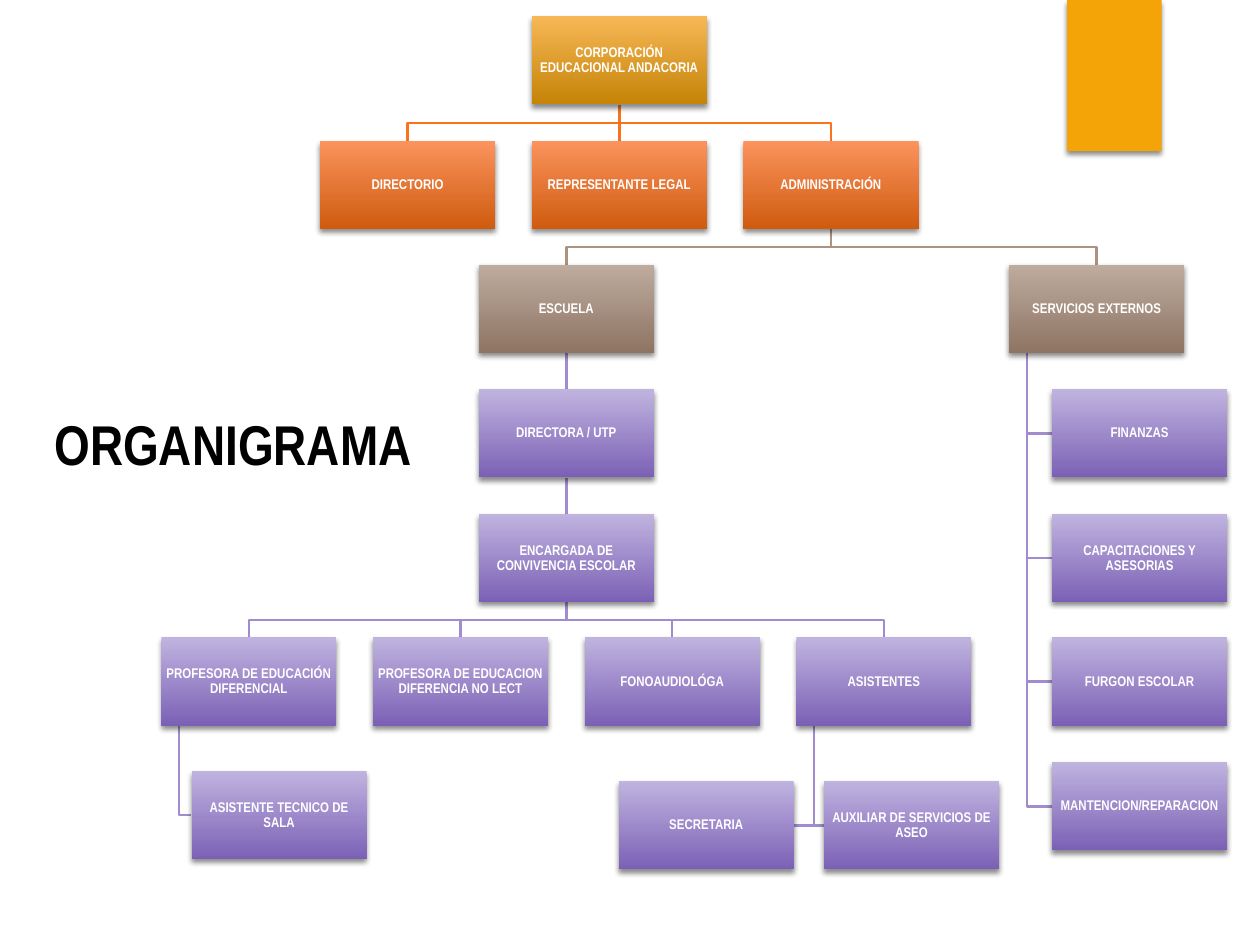
from lxml import etree
from pptx import Presentation
from pptx.dml.color import RGBColor
from pptx.enum.shapes import MSO_SHAPE
from pptx.enum.text import MSO_ANCHOR, PP_ALIGN
from pptx.oxml.ns import qn
from pptx.util import Inches, Pt

BOX_WIDTH, BOX_HEIGHT = 1.39, 0.7
SIDE_OFFSET = 0.14
ROWS = [0.13, 1.12, 2.10, 3.09, 4.08, 5.06, 6.05]

# Level: gradient top, gradient bottom, colour of the line from the parent
LEVELS = {
    "gold": ("F7B756", "C58406", None),
    "orange": ("FB935D", "CF5B0F", "FA731A"),
    "brown": ("BEAC9F", "8E7463", "AB9281"),
    "purple": ("C0B3DF", "7B61B6", "A18CD0"),
}

# Text, left, top, level, parent, side of the parent that the line leaves from
BOXES = [
    ("CORPORACIÓN EDUCACIONAL ANDACORIA", 4.22, ROWS[0], "gold", None, None),
    ("DIRECTORIO", 2.54, ROWS[1], "orange", "CORPORACIÓN EDUCACIONAL ANDACORIA", "centre"),
    ("REPRESENTANTE LEGAL", 4.22, ROWS[1], "orange", "CORPORACIÓN EDUCACIONAL ANDACORIA", "centre"),
    ("ADMINISTRACIÓN", 5.9, ROWS[1], "orange", "CORPORACIÓN EDUCACIONAL ANDACORIA", "centre"),
    ("ESCUELA", 3.8, ROWS[2], "brown", "ADMINISTRACIÓN", "centre"),
    ("DIRECTORA / UTP", 3.8, ROWS[3], "purple", "ESCUELA", "centre"),
    ("ENCARGADA DE CONVIVENCIA ESCOLAR", 3.8, ROWS[4], "purple", "DIRECTORA / UTP", "centre"),
    ("PROFESORA DE EDUCACIÓN DIFERENCIAL", 1.28, ROWS[5], "purple",
     "ENCARGADA DE CONVIVENCIA ESCOLAR", "centre"),
    ("ASISTENTE TECNICO DE SALA", 1.52, 6.12, "purple", "PROFESORA DE EDUCACIÓN DIFERENCIAL", "left"),
    ("PROFESORA DE EDUCACION DIFERENCIA NO LECT", 2.96, ROWS[5], "purple",
     "ENCARGADA DE CONVIVENCIA ESCOLAR", "centre"),
    ("FONOAUDIOLÓGA", 4.64, ROWS[5], "purple", "ENCARGADA DE CONVIVENCIA ESCOLAR", "centre"),
    ("ASISTENTES", 6.32, ROWS[5], "purple", "ENCARGADA DE CONVIVENCIA ESCOLAR", "centre"),
    ("SECRETARIA", 4.91, 6.2, "purple", "ASISTENTES", "left"),
    ("AUXILIAR DE SERVICIOS DE ASEO", 6.54, 6.2, "purple", "ASISTENTES", "left"),
    ("SERVICIOS EXTERNOS", 8.01, ROWS[2], "brown", "ADMINISTRACIÓN", "centre"),
    ("FINANZAS", 8.35, ROWS[3], "purple", "SERVICIOS EXTERNOS", "left"),
    ("CAPACITACIONES Y ASESORIAS", 8.35, ROWS[4], "purple", "SERVICIOS EXTERNOS", "left"),
    ("FURGON ESCOLAR", 8.35, ROWS[5], "purple", "SERVICIOS EXTERNOS", "left"),
    ("MANTENCION/REPARACION", 8.35, ROWS[6], "purple", "SERVICIOS EXTERNOS", "left"),
]


def color(value):
    return RGBColor.from_string(value)


def add_shadowed_rectangle(slide, left, top, width, height):
    shape = slide.shapes.add_shape(
        MSO_SHAPE.RECTANGLE, Inches(left), Inches(top), Inches(width), Inches(height))
    shape.line.fill.background()
    shape.shadow.inherit = False
    effects = shape._element.spPr.find(qn("a:effectLst"))
    shadow = etree.SubElement(effects, qn("a:outerShdw"), blurRad=str(Pt(3)),
                              dist=str(Pt(2)), dir="5400000", rotWithShape="0")
    black = etree.SubElement(shadow, qn("a:srgbClr"), val="000000")
    etree.SubElement(black, qn("a:alpha"), val="45000")
    return shape


presentation = Presentation()
presentation.slide_width, presentation.slide_height = Inches(10), Inches(7.5)
slide = presentation.slides.add_slide(presentation.slide_layouts[5])

# Corner block and title
corner = add_shadowed_rectangle(slide, 8.47, 0, 0.75, 1.2)
corner.fill.solid()
corner.fill.fore_color.rgb = color("F5A408")

title = slide.shapes.title
title.left, title.top = Inches(0.12), Inches(3.2)
title.width, title.height = Inches(3.46), Inches(1.18)
title.text_frame.text = "ORGANIGRAMA"
title.text_frame.vertical_anchor = MSO_ANCHOR.TOP
paragraph = title.text_frame.paragraphs[0]
paragraph.alignment = PP_ALIGN.CENTER
for name, value in {"name": "Arial Narrow", "size": Pt(32), "bold": True}.items():
    setattr(paragraph.font, name, value)
paragraph.font.color.rgb = color("000000")

# Lines from each parent to its children
positions = {text: (left, top) for text, left, top, *rest in BOXES}
for text, left, top, level, parent, side in BOXES:
    if parent is None:
        continue
    parent_left, parent_top = positions[parent]
    start_y = parent_top + BOX_HEIGHT
    if side == "centre":
        start_x = parent_left + BOX_WIDTH / 2
        end_x = left + BOX_WIDTH / 2
        middle_y = (start_y + top) / 2
        points = [(start_x, middle_y), (end_x, middle_y), (end_x, top)]
        if start_x == end_x:
            points = points[-1:]
    else:
        start_x = parent_left + SIDE_OFFSET
        end_x = left if left > start_x else left + BOX_WIDTH
        middle_y = top + BOX_HEIGHT / 2
        points = [(start_x, middle_y), (end_x, middle_y)]
    builder = slide.shapes.build_freeform(Inches(start_x), Inches(start_y))
    builder.add_line_segments([(Inches(x), Inches(y)) for x, y in points], close=False)
    link = builder.convert_to_shape()
    link.fill.background()
    link.line.color.rgb = color(LEVELS[level][2])
    link.line.width = Pt(1.5)
    link.shadow.inherit = False

# Boxes
for text, left, top, level, parent, side in BOXES:
    box = add_shadowed_rectangle(slide, left, top, BOX_WIDTH, BOX_HEIGHT)
    box.fill.gradient()
    box.fill.gradient_angle = 270
    for stop, value in zip(box.fill.gradient_stops, LEVELS[level]):
        stop.color.rgb = color(value)
    frame = box.text_frame
    frame.text = text
    frame.word_wrap = True
    frame.vertical_anchor = MSO_ANCHOR.MIDDLE
    for edge in ("left", "top", "right", "bottom"):
        setattr(frame, f"margin_{edge}", Inches(0.01))
    paragraph = frame.paragraphs[0]
    paragraph.alignment = PP_ALIGN.CENTER
    paragraph.line_spacing = 0.9
    for name, value in {"name": "Arial Narrow", "size": Pt(8), "bold": True}.items():
        setattr(paragraph.font, name, value)
    paragraph.font.color.rgb = color("FFFFFF")

presentation.save("out.pptx")
